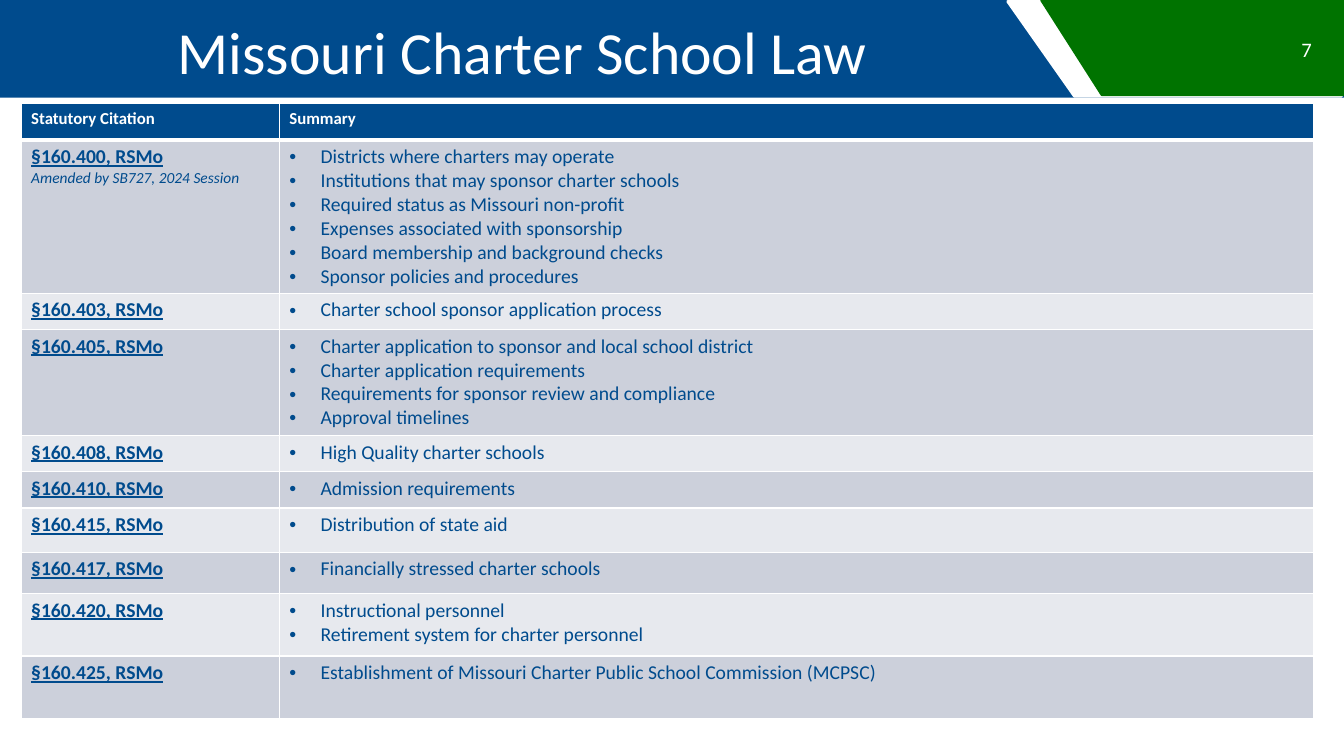
from lxml import etree
from pptx import Presentation
from pptx import util as u
from pptx.dml.color import RGBColor
from pptx.enum import shapes, text
from pptx.oxml import ns

COLORS = {
    "blue": "004B8D",
    "green": "007300",
    "white": "FFFFFF",
    "dark_band": "CCD0DB",
    "light_band": "E7E9EE",
}
FONT = "Calibri"
HEADINGS = ("Statutory Citation", "Summary")
HEADER_HEIGHT = 0.36
COLUMN_WIDTHS = (2.56, 10.26)
STATUTES = [
    ("§160.400, RSMo", "Amended by SB727, 2024 Session", 1.52, [
        "Districts where charters may operate",
        "Institutions that may sponsor charter schools",
        "Required status as Missouri non-profit",
        "Expenses associated with sponsorship",
        "Board membership and background checks",
        "Sponsor policies and procedures",
    ]),
    ("§160.403, RSMo", None, 0.36, ["Charter school sponsor application process"]),
    ("§160.405, RSMo", None, 1.05, [
        "Charter application to sponsor and local school district",
        "Charter application requirements",
        "Requirements for sponsor review and compliance",
        "Approval timelines",
    ]),
    ("§160.408, RSMo", None, 0.36, ["High Quality charter schools"]),
    ("§160.410, RSMo", None, 0.36, ["Admission requirements"]),
    ("§160.415, RSMo", None, 0.44, ["Distribution of state aid"]),
    ("§160.417, RSMo", None, 0.41, ["Financially stressed charter schools"]),
    ("§160.420, RSMo", None, 0.62, [
        "Instructional personnel",
        "Retirement system for charter personnel",
    ]),
    ("§160.425, RSMo", None, 0.62, [
        "Establishment of Missouri Charter Public School Commission (MCPSC)",
    ]),
]


def color(name):
    return RGBColor.from_string(COLORS[name])


def write(frame, words, size, fill="blue", bold=False, italic=False,
          underline=False, align=text.PP_ALIGN.LEFT, indent=0, bullet=False):
    para = frame.paragraphs[0]
    if para.runs:
        para = frame.add_paragraph()
    para.alignment = align
    properties = para._p.get_or_add_pPr()
    if indent:
        properties.set("marL", str(u.Inches(indent)))
    if bullet:
        properties.set("indent", str(-u.Inches(indent)))
        face = etree.SubElement(properties, ns.qn("a:buFont"))
        face.set("typeface", "Arial")
        mark = etree.SubElement(properties, ns.qn("a:buChar"))
        mark.set("char", "•")
    span = para.add_run()
    span.text = words
    font = span.font
    font.name = FONT
    font.size = u.Pt(size)
    font.bold = bold
    font.italic = italic
    font.underline = underline
    font.color.rgb = color(fill)


def add_block(page, kind, box, fill, rotation=0, outline=0):
    block = page.shapes.add_shape(kind, *map(u.Inches, box))
    block.shadow.inherit = False
    block.rotation = rotation
    block.fill.solid()
    block.fill.fore_color.rgb = color(fill)
    if outline:
        block.line.color.rgb = color(fill)
        block.line.width = u.Pt(outline)
    else:
        block.line.fill.background()


def add_text(page, box, words, size, **style):
    frame = page.shapes.add_textbox(*map(u.Inches, box)).text_frame
    frame.word_wrap = True
    frame.vertical_anchor = text.MSO_ANCHOR.MIDDLE
    write(frame, words, size, **style)


def add_banner(page, box):
    left, top, width, height = box
    right = left + width
    slanted = shapes.MSO_SHAPE.FLOWCHART_MANUAL_INPUT
    add_block(page, shapes.MSO_SHAPE.RECTANGLE, box, "blue")
    add_block(page, slanted, (right - 2.15, top - 1.17, 0.94, 3.31), "white", 270, 2)
    add_block(page, slanted, (right - 1.97, top - 1.03, 0.94, 3), "green", 270, 2)
    add_text(page, (right - 0.89, top + 0.29, 0.67, 0.4), "7", 14.7,
             fill="white", align=text.PP_ALIGN.RIGHT)
    add_text(page, (left + 0.44, top + 0.07, 9.33, height - 0.11),
             "Missouri Charter School Law", 42.7, fill="white",
             align=text.PP_ALIGN.CENTER, indent=0.16)


def style_cell(cell, fill, above=1, below=1):
    properties = cell._tc.get_or_add_tcPr()
    for side, width in (("L", 1), ("R", 1), ("T", above), ("B", below)):
        border = etree.SubElement(properties, ns.qn("a:ln" + side))
        border.set("w", str(u.Pt(width)))
        paint = etree.SubElement(border, ns.qn("a:solidFill"))
        etree.SubElement(paint, ns.qn("a:srgbClr")).set("val", COLORS["white"])
    cell.fill.solid()
    cell.fill.fore_color.rgb = color(fill)


def add_statute_table(page, left, top):
    heights = [HEADER_HEIGHT] + [statute[2] for statute in STATUTES]
    table = page.shapes.add_table(
        len(heights), len(COLUMN_WIDTHS), u.Inches(left), u.Inches(top),
        u.Inches(sum(COLUMN_WIDTHS)), u.Inches(sum(heights))).table
    for column, width in zip(table.columns, COLUMN_WIDTHS):
        column.width = u.Inches(width)
    for row, height in zip(table.rows, heights):
        row.height = u.Inches(height)
    for cell, heading in zip(table.rows[0].cells, HEADINGS):
        style_cell(cell, "blue", below=3)
        write(cell.text_frame, heading, 12, fill="white", bold=True)
    for number, (citation, note, _, topics) in enumerate(STATUTES, 1):
        cells = list(table.rows[number].cells)
        for cell in cells:
            style_cell(cell, "dark_band" if number % 2 else "light_band",
                       above=3 if number == 1 else 1)
        write(cells[0].text_frame, citation, 14, bold=True, underline=True)
        if note:
            write(cells[0].text_frame, note, 11, italic=True)
        for topic in topics:
            write(cells[1].text_frame, topic, 14, indent=0.31, bullet=True)


def main():
    deck = Presentation()
    deck.slide_width = u.Inches(13.33)
    deck.slide_height = u.Inches(7.5)
    page = deck.slides.add_slide(deck.slide_layouts[6])
    add_banner(page, (0, 0, 13.33, 0.97))
    add_statute_table(page, 0.21, 1.03)
    deck.save("out.pptx")


if __name__ == "__main__":
    main()
